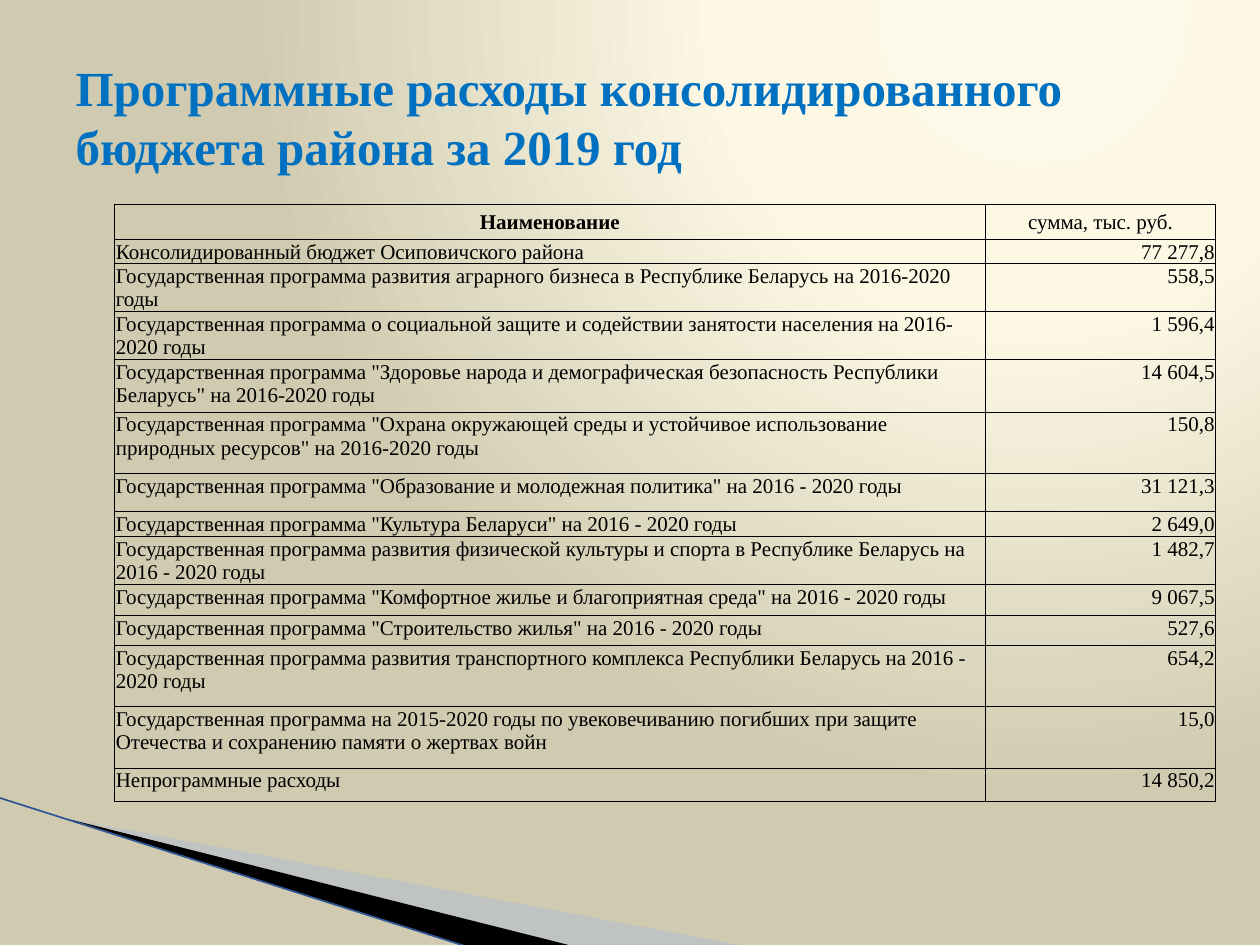
from dataclasses import dataclass

from lxml.etree import SubElement
from pptx import Presentation
from pptx.dml.color import RGBColor as RGB
from pptx.enum.text import MSO_ANCHOR as Anchor, PP_ALIGN as Align
from pptx.oxml import parse_xml
from pptx.oxml.ns import nsdecls, qn
from pptx.util import Pt


@dataclass(frozen=True)
class Theme:
    """Colours, font and type sizes of the slide."""
    font: str = "Times New Roman"
    title_size: int = 28
    table_size: int = 12
    title: str = "0070C0"
    ink: str = "000000"
    haze: str = "A7B9DB"
    edge: str = "2F5597"
    backdrop: tuple = ((0, "FDF9E8"), (40, "FCF8E4"), (100, "D0CBB0"))


THEME = Theme()
TITLE = "Программные расходы консолидированного бюджета района за 2019 год"
HEADINGS = ("Наименование", "сумма, тыс. руб.", 20)
PROGRAMMES = [
    ("Консолидированный бюджет Осиповичского района", "77 277,8", 14),
    ("Государственная программа развития аграрного бизнеса в Республике Беларусь на 2016-2020 годы", "558,5", 27),
    ("Государственная программа о социальной защите и содействии занятости населения на 2016-2020 годы",
     "1 596,4", 27),
    ('Государственная программа "Здоровье народа и демографическая безопасность Республики Беларусь" '
     'на 2016-2020 годы', "14 604,5", 30),
    ('Государственная программа "Охрана окружающей среды и устойчивое использование природных ресурсов" '
     'на 2016-2020 годы', "150,8", 35),
    ('Государственная программа "Образование и молодежная политика" на 2016 - 2020 годы', "31 121,3", 22),
    ('Государственная программа "Культура Беларуси" на 2016 - 2020 годы', "2 649,0", 14),
    ("Государственная программа развития физической культуры и спорта в Республике Беларусь на 2016 - 2020 годы",
     "1 482,7", 27),
    ('Государственная программа "Комфортное жилье и благоприятная среда" на 2016 - 2020 годы', "9 067,5", 18),
    ('Государственная программа "Строительство жилья" на 2016 - 2020 годы', "527,6", 17),
    ("Государственная программа развития транспортного комплекса Республики Беларусь на 2016 - 2020 годы",
     "654,2", 35),
    ("Государственная программа на 2015-2020 годы по увековечиванию погибших при защите Отечества "
     "и сохранению памяти о жертвах войн", "15,0", 35),
    ("Непрограммные расходы", "14 850,2", 19),
]


def style_font(font, size, colour, bold):
    """Apply the theme typeface with the given size, colour and weight."""
    font.name, font.size, font.bold = THEME.font, Pt(size), bold
    font.color.rgb = RGB.from_string(colour)


def paint_backdrop(slide):
    """Fill the background with a glow from the upper right."""
    stops = "".join(
        f'<a:gs pos="{pos * 1000}"><a:srgbClr val="{colour}"/></a:gs>' for pos, colour in THEME.backdrop)
    glow = parse_xml(
        f'<a:gradFill {nsdecls("a")} rotWithShape="1"><a:gsLst>{stops}</a:gsLst><a:path path="circle">'
        '<a:fillToRect l="65000" t="0" r="0" b="98000"/></a:path></a:gradFill>')
    fill = slide.background.fill
    fill.solid()
    properties = slide.background._cSld.bg.bgPr
    properties.replace(properties.find(qn("a:solidFill")), glow)


def add_wedge(slide, left, top, points, colour, opacity=100):
    """Draw a filled wedge whose points are relative to its corner."""
    corners = [(Pt(left + x), Pt(top + y)) for x, y in points]
    builder = slide.shapes.build_freeform(*corners[0], scale=1.0)
    builder.add_line_segments(corners[1:], close=True)
    wedge = builder.convert_to_shape()
    wedge.shadow.inherit = False
    wedge.line.fill.background()
    wedge.fill.solid()
    wedge.fill.fore_color.rgb = RGB.from_string(colour)
    if opacity < 100:
        tint = wedge._element.spPr.find(".//" + qn("a:srgbClr"))
        SubElement(tint, qn("a:alpha"), val=str(opacity * 1000))


def add_corner(slide, left, top, width, height):
    """Place the swoosh of two wedges and an edge line in the lower left."""
    bottom = height - 12
    add_wedge(slide, left + 40, top + 12, [(0, 0), (388, bottom), (288, bottom)], THEME.haze, 40)
    add_wedge(slide, left + 39, top + 12, [(0, 0), (290, bottom), (229, bottom)], THEME.ink)
    edge = slide.shapes.add_connector(1, Pt(left), Pt(top), Pt(left + width), Pt(top + height))
    edge.line.color.rgb = RGB.from_string(THEME.edge)
    edge.line.width = Pt(0.95)
    SubElement(edge._element.spPr, qn("a:effectLst"))


def add_title(slide, left, top, width, height):
    """Fill the title placeholder and set it in the given box."""
    title = slide.shapes.title
    title.left, title.top, title.width, title.height = map(Pt, (left, top, width, height))
    frame = title.text_frame
    frame.text = TITLE
    frame.vertical_anchor = Anchor.MIDDLE
    frame.paragraphs[0].alignment = Align.LEFT
    style_font(frame.paragraphs[0].runs[0].font, THEME.title_size, THEME.title, True)


def format_cell(cell, text, alignment, anchor, bold):
    """Write one table cell with thin borders and no fill."""
    cell.text = text
    cell.vertical_anchor = anchor
    cell.margin_left = cell.margin_right = cell.margin_top = Pt(0.72)
    cell.margin_bottom = Pt(0)
    paragraph = cell.text_frame.paragraphs[0]
    paragraph.alignment = alignment
    style_font(paragraph.runs[0].font, THEME.table_size, THEME.ink, bold)
    properties = cell._tc.get_or_add_tcPr()
    for side in ("lnL", "lnR", "lnT", "lnB"):
        border = SubElement(properties, qn(f"a:{side}"), w=str(Pt(0.5)))
        SubElement(SubElement(border, qn("a:solidFill")), qn("a:srgbClr"), val=THEME.ink)
    cell.fill.background()


def add_expenses(slide, left, top, width, amount_width):
    """Build the table of programmes and their amounts."""
    rows = [HEADINGS, *PROGRAMMES]
    height = sum(row_height for _, _, row_height in rows)
    table = slide.shapes.add_table(len(rows), 2, *map(Pt, (left, top, width, height))).table
    table.first_row = table.horz_banding = False
    table.columns[0].width, table.columns[1].width = Pt(width - amount_width), Pt(amount_width)
    for index, (name, amount, row_height) in enumerate(rows):
        heading = index == 0
        table.rows[index].height = Pt(row_height)
        anchor = Anchor.MIDDLE if heading else Anchor.TOP
        format_cell(table.cell(index, 0), name, Align.CENTER if heading else Align.LEFT, anchor, heading)
        format_cell(table.cell(index, 1), amount, Align.CENTER if heading else Align.RIGHT, anchor, False)


def main():
    """Assemble the slide and save it."""
    deck = Presentation()
    deck.slide_width, deck.slide_height = Pt(720), Pt(540)
    slide = deck.slides.add_slide(deck.slide_layouts[5])
    paint_backdrop(slide)
    add_corner(slide, 0, 456, 267, 85)
    add_expenses(slide, 65.5, 116.64, 629.3, 131.8)
    add_title(slide, 36, 21.6, 648, 90)
    deck.save("out.pptx")


if __name__ == "__main__":
    main()
